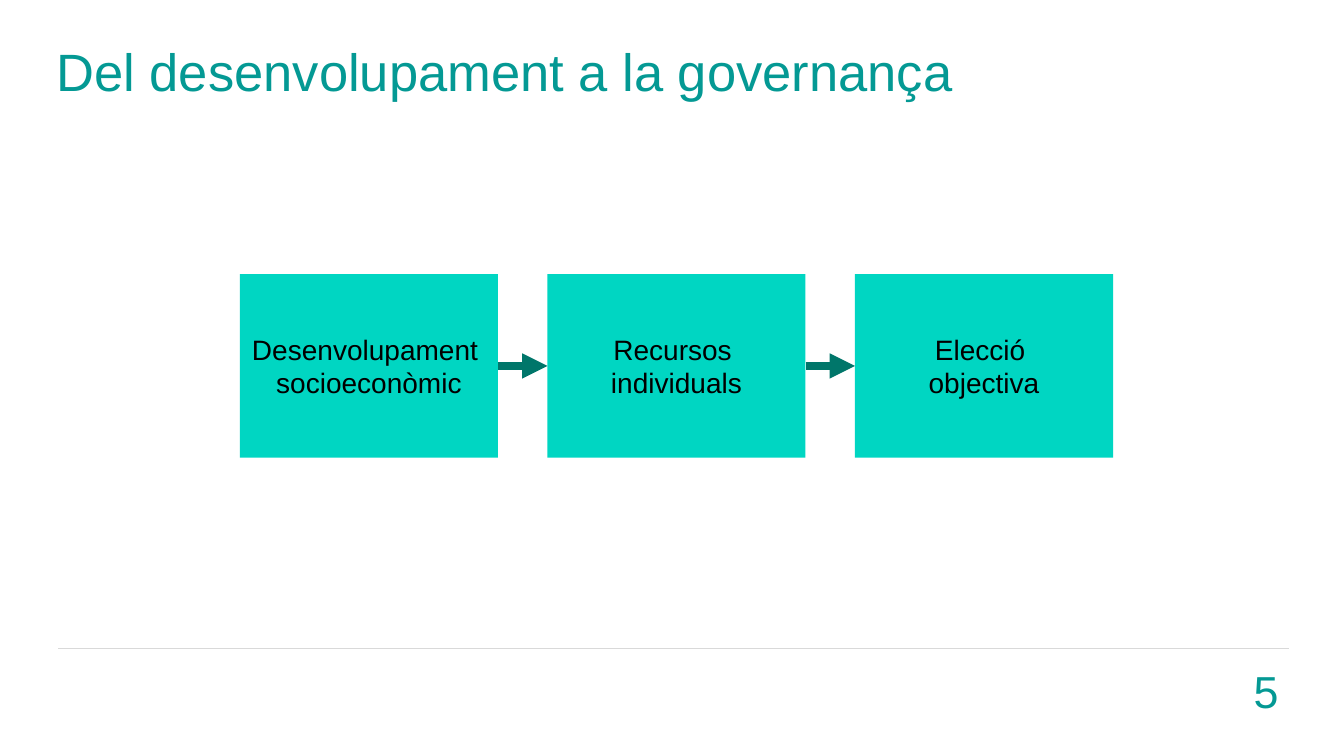
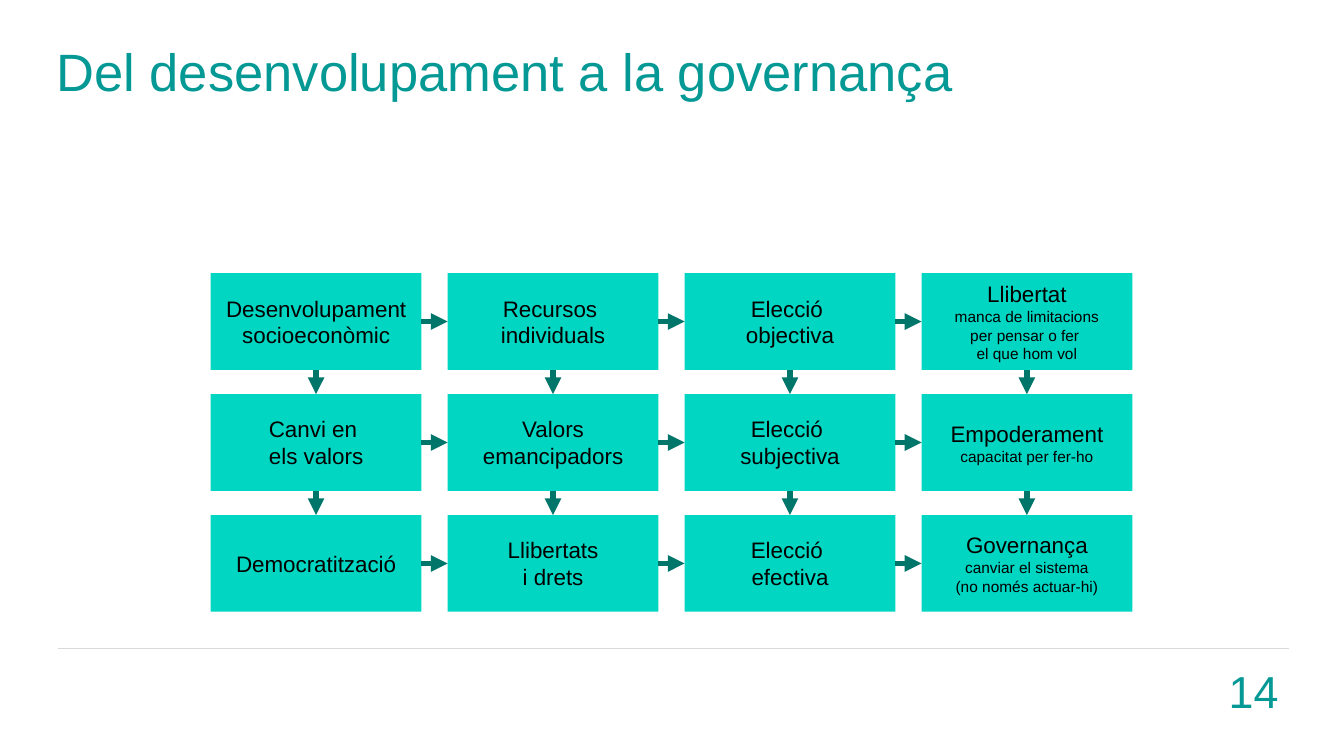
"""Build two slides on the path from development to governance."""
from dataclasses import dataclass

from lxml import etree
from pptx import Presentation
from pptx.dml.color import RGBColor
from pptx.enum.shapes import MSO_CONNECTOR, MSO_SHAPE
from pptx.enum.text import MSO_ANCHOR, MSO_AUTO_SIZE, PP_ALIGN
from pptx.oxml.ns import qn
from pptx.presentation import Presentation as Deck
from pptx.shapes.autoshape import Shape
from pptx.shapes.connector import Connector
from pptx.slide import Slide
from pptx.text.text import TextFrame
from pptx.util import Inches, Pt

TEAL = RGBColor(0x04, 0x99, 0x94)
TURQUOISE = RGBColor(0x00, 0xD6, 0xC2)
DARK_TEAL = RGBColor(0x00, 0x76, 0x6A)
PALE_GREY = RGBColor(0xD9, 0xD9, 0xD9)
BLACK = RGBColor(0x00, 0x00, 0x00)

RECTANGLE = MSO_SHAPE.RECTANGLE
STRAIGHT = MSO_CONNECTOR.STRAIGHT
LEFT, CENTER, RIGHT = PP_ALIGN.LEFT, PP_ALIGN.CENTER, PP_ALIGN.RIGHT
MIDDLE = MSO_ANCHOR.MIDDLE
NO_AUTOFIT = MSO_AUTO_SIZE.NONE

FONT = "Arial"
TITLE_ONLY = 5
TOP_SITE, LEFT_SITE, BOTTOM_SITE, RIGHT_SITE = range(4)
MARGIN, RIGHT_EDGE, RULE_Y = 0.58, 12.78, 6.43
NOTE_SIZE = 11
TITLE = "Del desenvolupament a la governança"


@dataclass(frozen=True)
class Concept:
    """A heading of one or more paragraphs with smaller notes below."""
    heading: tuple[str, ...]
    notes: tuple[str, ...] = ()


@dataclass(frozen=True)
class Grid:
    """Origin, cell size and gaps of a grid in inches."""
    left: float
    top: float
    width: float
    height: float
    column_gap: float
    row_gap: float = 0

    def cell(self, column: int, row: int) -> tuple[int, int, int, int]:
        """Return the box of one cell."""
        x = self.left + column * (self.width + self.column_gap)
        y = self.top + row * (self.height + self.row_gap)
        return Inches(x), Inches(y), Inches(self.width), Inches(self.height)


@dataclass(frozen=True)
class Diagram:
    """One slide: its page number, grid, concepts and drawing sizes."""
    page: int
    grid: Grid
    rows: tuple[tuple[Concept, ...], ...]
    text_size: float
    arrow_width: float


RESOURCES = Concept(("Recursos ", "individuals"))
OBJECTIVE_CHOICE = Concept(("Elecció ", "objectiva"))

DIAGRAMS = (
    Diagram(
        page=5,
        grid=Grid(2.38, 2.72, 2.56, 1.82, 0.49),
        rows=((Concept(("Desenvolupament \vsocioeconòmic",)), RESOURCES, OBJECTIVE_CHOICE),),
        text_size=20,
        arrow_width=6,
    ),
    Diagram(
        page=14,
        grid=Grid(2.09, 2.71, 2.09, 0.96, 0.26, 0.24),
        rows=(
            (
                Concept(("Desenvolupament socioeconòmic",)),
                RESOURCES,
                OBJECTIVE_CHOICE,
                Concept(("Llibertat",),
                        ("manca de limitacions", "per pensar o fer ", "el que hom vol")),
            ),
            (
                Concept(("Canvi en ", "els valors")),
                Concept(("Valors", "emancipadors")),
                Concept(("Elecció ", "subjectiva")),
                Concept(("Empoderament",), ("capacitat per fer-ho",)),
            ),
            (
                Concept(("Democratització",)),
                Concept(("Llibertats", "i drets")),
                Concept(("Elecció ", "efectiva")),
                Concept(("Governança",), ("canviar el sistema", "(no només actuar-hi)")),
            ),
        ),
        text_size=16,
        arrow_width=4,
    ),
)


def write(frame: TextFrame, text: str, *, size: float, color: RGBColor,
          align: PP_ALIGN, spacing: float = 1.0, append: bool = False) -> None:
    """Write one formatted paragraph into a vertically centred frame."""
    frame.word_wrap = True
    frame.auto_size = NO_AUTOFIT
    frame.vertical_anchor = MIDDLE
    paragraph = frame.add_paragraph() if append else frame.paragraphs[0]
    paragraph.text = text
    paragraph.alignment = align
    paragraph.line_spacing = spacing
    for run in paragraph.runs:
        run.font.name = FONT
        run.font.size = Pt(size)
        run.font.color.rgb = color


def add_line(slide: Slide, color: RGBColor, width: float) -> Connector:
    """Add a flat line along the footer rule."""
    line = slide.shapes.add_connector(
        STRAIGHT, Inches(MARGIN), Inches(RULE_Y), Inches(RIGHT_EDGE), Inches(RULE_Y))
    line.line.color.rgb = color
    line.line.width = Pt(width)
    etree.SubElement(line._element.spPr, qn("a:effectLst"))
    return line


def add_arrow(slide: Slide, start: Shape, start_site: int,
              end: Shape, end_site: int, width: float) -> None:
    """Join two concept boxes with an arrow."""
    arrow = add_line(slide, DARK_TEAL, width)
    arrow.begin_connect(start, start_site)
    arrow.end_connect(end, end_site)
    etree.SubElement(arrow.line._get_or_add_ln(), qn("a:tailEnd"), type="triangle")


def add_concept(slide: Slide, concept: Concept, box: tuple[int, int, int, int],
                size: float) -> Shape:
    """Add the filled box of one concept."""
    tile = slide.shapes.add_shape(RECTANGLE, *box)
    tile.shadow.inherit = False
    tile.fill.solid()
    tile.fill.fore_color.rgb = TURQUOISE
    tile.line.fill.background()
    lines = [(text, size) for text in concept.heading]
    lines += [(text, NOTE_SIZE) for text in concept.notes]
    for index, (text, line_size) in enumerate(lines):
        write(tile.text_frame, text, size=line_size, color=BLACK, align=CENTER,
              append=index > 0)
    return tile


def add_frame(deck: Deck, page: int) -> Slide:
    """Add a slide with the shared title, footer rule and page number."""
    slide = deck.slides.add_slide(deck.slide_layouts[TITLE_ONLY])
    add_line(slide, PALE_GREY, 0.5)
    title = slide.shapes.title
    title.left, title.top = Inches(0.46), Inches(0.44)
    title.width, title.height = Inches(11.7), Inches(0.59)
    write(title.text_frame, TITLE, size=37.5, color=TEAL, align=LEFT, spacing=0.9)
    number = slide.shapes.add_textbox(
        Inches(9.3), Inches(6.65), Inches(RIGHT_EDGE - 9.3), Inches(0.4))
    write(number.text_frame, str(page), size=32, color=TEAL, align=RIGHT)
    return slide


def add_diagram(deck: Deck, diagram: Diagram) -> None:
    """Add a slide whose concepts point to the right and downwards."""
    slide = add_frame(deck, diagram.page)
    tiles = [
        [add_concept(slide, concept, diagram.grid.cell(column, row), diagram.text_size)
         for column, concept in enumerate(concepts)]
        for row, concepts in enumerate(diagram.rows)
    ]
    for across in tiles:
        for start, end in zip(across, across[1:]):
            add_arrow(slide, start, RIGHT_SITE, end, LEFT_SITE, diagram.arrow_width)
    for upper, lower in zip(tiles, tiles[1:]):
        for start, end in zip(upper, lower):
            add_arrow(slide, start, BOTTOM_SITE, end, TOP_SITE, diagram.arrow_width)


def main() -> None:
    """Build and save the presentation."""
    deck = Presentation()
    deck.slide_width, deck.slide_height = Inches(13.33), Inches(7.5)
    for diagram in DIAGRAMS:
        add_diagram(deck, diagram)
    deck.save("out.pptx")


if __name__ == "__main__":
    main()
